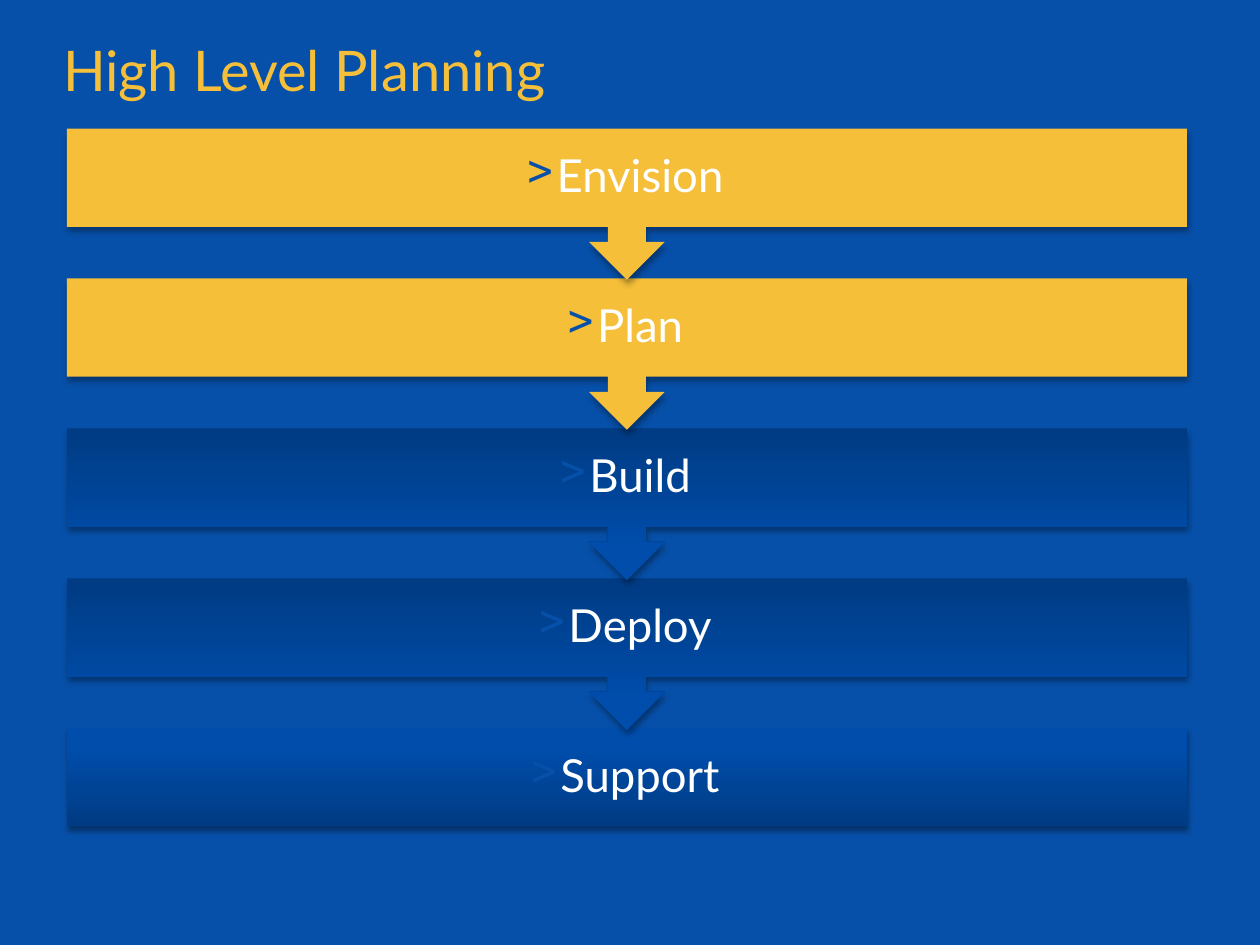
from lxml import etree
from pptx import Presentation
from pptx import util as u
from pptx.dml.color import RGBColor
from pptx.enum import shapes, text
from pptx.oxml import parse_xml
from pptx.oxml.ns import nsdecls, qn

COLORS = {
    "background": "0750A9",
    "gold": "F5BF39",
    "deep": "003B83",
    "blue": "004DAB",
    "white": "FFFFFF",
    "shadow": "000000",
}
FONT = "Lato"
STEPS = [
    ("Envision", True),
    ("Plan", True),
    ("Build", False),
    ("Deploy", False),
    ("Support", False),
]
LEFT, TOP, WIDTH = 0.53, 1.02, 8.89
BAR_HEIGHT, CALLOUT_HEIGHT, PITCH = 0.78, 1.2, 1.19


def style_font(paragraph, size, color):
    font = paragraph.runs[0].font
    font.name = FONT
    font.size = u.Pt(size)
    font.color.rgb = RGBColor.from_string(COLORS[color])


def style_block(shape, done):
    shape.line.fill.background()
    if done:
        shape.fill.solid()
        shape.fill.fore_color.rgb = RGBColor.from_string(COLORS["gold"])
    else:
        stops = "".join(
            f'<a:gs pos="{position}"><a:srgbClr val="{COLORS[color]}"/></a:gs>'
            for position, color in [(0, "deep"), (80000, "blue"), (100000, "blue")]
        )
        gradient = parse_xml(
            f'<a:gradFill {nsdecls("a")} rotWithShape="1"><a:gsLst>{stops}</a:gsLst>'
            '<a:lin ang="16200000" scaled="0"/></a:gradFill>'
        )
        shape._element.spPr.find(qn("a:prstGeom")).addnext(gradient)
    shape.shadow.inherit = False
    effects = shape._element.spPr.find(qn("a:effectLst"))
    effects.append(parse_xml(
        f'<a:outerShdw {nsdecls("a")} blurRad="{u.Pt(3.1)}" dist="{u.Pt(1.8)}" '
        f'dir="5400000" rotWithShape="0"><a:srgbClr val="{COLORS["shadow"]}">'
        '<a:alpha val="35000"/></a:srgbClr></a:outerShdw>'
    ))


presentation = Presentation()
presentation.slide_width = u.Inches(10)
presentation.slide_height = u.Inches(7.5)
slide = presentation.slides.add_slide(presentation.slide_layouts[5])
slide.background.fill.solid()
slide.background.fill.fore_color.rgb = RGBColor.from_string(COLORS["background"])

title = slide.shapes.title
title.left, title.top = u.Inches(0.4), u.Inches(0.31)
title.width, title.height = u.Inches(8.1), u.Inches(0.56)
title_frame = title.text_frame
title_frame.text = "High Level Planning"
title_frame.word_wrap = True
title_frame.auto_size = text.MSO_AUTO_SIZE.SHAPE_TO_FIT_TEXT
title_frame.vertical_anchor = text.MSO_ANCHOR.TOP
title_paragraph = title_frame.paragraphs[0]
title_paragraph.alignment = text.PP_ALIGN.LEFT
title_paragraph.line_spacing = 0.85
style_font(title_paragraph, 32, "gold")

last = len(STEPS) - 1
for index, (name, done) in reversed(list(enumerate(STEPS))):
    top = u.Inches(TOP + index * PITCH)
    kind = shapes.MSO_SHAPE.RECTANGLE if index == last else shapes.MSO_SHAPE.UP_ARROW_CALLOUT
    height = BAR_HEIGHT if index == last else CALLOUT_HEIGHT
    block = slide.shapes.add_shape(kind, u.Inches(LEFT), top, u.Inches(WIDTH), u.Inches(height))
    block.rotation = 0 if index == last else 180
    style_block(block, done)

    label = slide.shapes.add_textbox(u.Inches(LEFT), top, u.Inches(WIDTH), u.Inches(BAR_HEIGHT))
    frame = label.text_frame
    frame.word_wrap = True
    frame.vertical_anchor = text.MSO_ANCHOR.MIDDLE
    frame.margin_left = frame.margin_right = u.Inches(0.2)
    frame.margin_top = frame.margin_bottom = u.Inches(0.2)
    paragraph = frame.paragraphs[0]
    paragraph.text = name
    properties = paragraph._p.get_or_add_pPr()
    spacing = etree.SubElement(properties, qn("a:spcAft"))
    etree.SubElement(spacing, qn("a:spcPct"), val="35000")
    bullet_color = etree.SubElement(properties, qn("a:buClr"))
    etree.SubElement(bullet_color, qn("a:srgbClr"), val=COLORS["background"])
    etree.SubElement(properties, qn("a:buChar"), char=">")
    paragraph.alignment = text.PP_ALIGN.CENTER
    paragraph.line_spacing = 0.9
    style_font(paragraph, 26, "white")

presentation.save("out.pptx")
